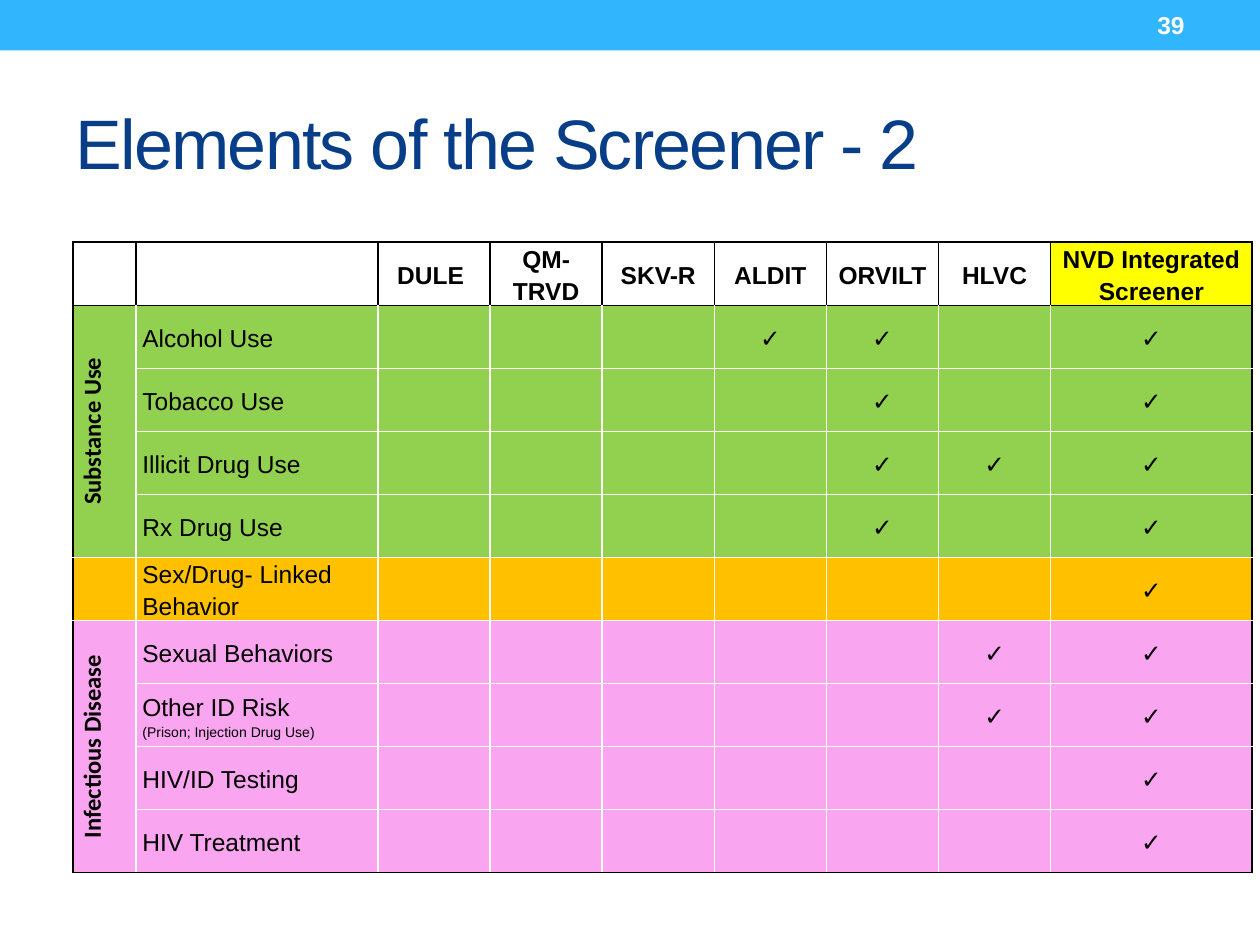
from lxml import etree
from pptx import Presentation
from pptx.dml.color import RGBColor
from pptx.enum.shapes import MSO_SHAPE
from pptx.enum.text import MSO_ANCHOR, PP_ALIGN
from pptx.oxml.ns import qn
from pptx.util import Inches, Pt

RECTANGLE = MSO_SHAPE.RECTANGLE
MIDDLE = MSO_ANCHOR.MIDDLE
LEFT, CENTER, RIGHT = PP_ALIGN.LEFT, PP_ALIGN.CENTER, PP_ALIGN.RIGHT

THEME = {
    "font": "Arial", "group_font": "Calibri",
    "title_size": 40, "text_size": 14, "note_size": 8,
    "bar": "31B6FD", "title": "073E87", "black": "000000", "white": "FFFFFF",
    "highlight": "FFFF00", "green": "92D050", "orange": "FFC000", "pink": "F9A5EF",
}

TITLE = "Elements of the Screener - 2"
PAGE_NUMBER = "39"
HEADERS = ["", "", "DULE ", "QM-TRVD", "SKV-R", "ALDIT", "ORVILT", "HLVC",
           "NVD Integrated Screener"]
SCREENER = HEADERS[-1]
GROUPS = [
    ("Substance Use", "green", [
        ("Alcohol Use", "", ["ALDIT", "ORVILT", SCREENER]),
        ("Tobacco Use", "", ["ORVILT", SCREENER]),
        ("Illicit Drug Use", "", ["ORVILT", "HLVC", SCREENER]),
        ("Rx Drug Use", "", ["ORVILT", SCREENER]),
    ]),
    ("", "orange", [("Sex/Drug- Linked Behavior", "", [SCREENER])]),
    ("Infectious Disease", "pink", [
        ("Sexual Behaviors", "", ["HLVC", SCREENER]),
        ("Other ID Risk", "(Prison; Injection Drug Use)", ["HLVC", SCREENER]),
        ("HIV/ID Testing", "", [SCREENER]),
        ("HIV Treatment", "", [SCREENER]),
    ]),
]
COLUMN_WIDTHS = [0.5, 1.92] + [0.89] * 6 + [1.6]
ROW_HEIGHT = 0.5
ROW_COUNT = 1 + sum(len(items) for _, _, items in GROUPS)
LAST_ROW, LAST_COLUMN = ROW_COUNT - 1, len(HEADERS) - 1


def color(name):
    return RGBColor.from_string(THEME[name])


def style(font, size, color_name, bold=False, family="font"):
    font.name = THEME[family]
    font.size = Pt(THEME[size])
    font.bold = bold
    font.color.rgb = color(color_name)


def write_cell(cell, text, bold=True, align=CENTER, family="font"):
    paragraph = cell.text_frame.paragraphs[0]
    paragraph.text = text
    paragraph.alignment = align
    paragraph.line_spacing = 1.15
    style(paragraph.font, "text_size", "black", bold, family)
    return paragraph


def set_borders(cell, row, end_row, column):
    black_edges = {
        "L": column == 0,
        "R": column == LAST_COLUMN,
        "T": row <= 1,
        "B": end_row == LAST_ROW,
    }
    properties = cell._tc.get_or_add_tcPr()
    for index, (side, is_black) in enumerate(black_edges.items()):
        line = etree.Element(qn(f"a:ln{side}"), w=str(Pt(1)))
        fill = etree.SubElement(line, qn("a:solidFill"))
        name = "black" if row == 0 or is_black else "white"
        etree.SubElement(fill, qn("a:srgbClr"), val=THEME[name])
        properties.insert(index, line)


def format_cell(cell, fill_name, row, column, end_row=None):
    cell.fill.solid()
    cell.fill.fore_color.rgb = color(fill_name)
    cell.vertical_anchor = MIDDLE
    cell.margin_left = cell.margin_right = Inches(0.05)
    cell.margin_top = cell.margin_bottom = 0
    set_borders(cell, row, row if end_row is None else end_row, column)


def add_bar(slide):
    bar = slide.shapes.add_shape(RECTANGLE, 0, 0, Inches(10), Inches(0.4))
    bar.shadow.inherit = False
    bar.fill.solid()
    bar.fill.fore_color.rgb = color("bar")
    bar.line.fill.background()


def add_title(slide):
    title = slide.shapes.title
    title.left, title.top = Inches(0.5), Inches(0.58)
    title.width, title.height = Inches(9), Inches(1.08)
    title.text_frame.vertical_anchor = MIDDLE
    paragraph = title.text_frame.paragraphs[0]
    paragraph.text = TITLE
    paragraph.alignment = LEFT
    style(paragraph.font, "title_size", "title")
    paragraph.runs[0]._r.get_or_add_rPr().set("spc", "-100")


def add_page_number(slide):
    box = slide.shapes.add_textbox(Inches(8.33), Inches(0.02), Inches(1.17), Inches(0.36))
    box.text_frame.word_wrap = True
    box.text_frame.vertical_anchor = MIDDLE
    paragraph = box.text_frame.paragraphs[0]
    paragraph.text = PAGE_NUMBER
    paragraph.alignment = RIGHT
    style(paragraph.font, "text_size", "white", bold=True)


def add_item(table, row, fill_name, label, note, checks):
    for column in range(1, len(HEADERS)):
        format_cell(table.cell(row, column), fill_name, row, column)
    paragraph = write_cell(table.cell(row, 1), label, bold=False, align=LEFT)
    if note:
        paragraph.add_line_break()
        run = paragraph.add_run()
        run.text = note
        run.font.size = Pt(THEME["note_size"])
    for header in checks:
        write_cell(table.cell(row, HEADERS.index(header)), "✓")


def add_screener_table(slide):
    table = slide.shapes.add_table(
        ROW_COUNT, len(HEADERS), Inches(0.58), Inches(1.92),
        Inches(sum(COLUMN_WIDTHS)), Inches(ROW_HEIGHT * ROW_COUNT)).table
    table.first_row = table.horz_banding = False
    for column, width in zip(table.columns, COLUMN_WIDTHS):
        column.width = Inches(width)
    for table_row in table.rows:
        table_row.height = Inches(ROW_HEIGHT)

    for column, header in enumerate(HEADERS):
        cell = table.cell(0, column)
        format_cell(cell, "highlight" if header == SCREENER else "white", 0, column)
        if header:
            write_cell(cell, header)

    row = 1
    for group, fill_name, items in GROUPS:
        end_row = row + len(items) - 1
        group_cell = table.cell(row, 0)
        if group:
            group_cell.merge(table.cell(end_row, 0))
            write_cell(group_cell, group, family="group_font")
            group_cell._tc.get_or_add_tcPr().set("vert", "vert270")
        for group_row in range(row, end_row + 1):
            format_cell(table.cell(group_row, 0), fill_name, group_row, 0, end_row)
        for item_row, item in enumerate(items, row):
            add_item(table, item_row, fill_name, *item)
        row = end_row + 1


def main():
    presentation = Presentation()
    presentation.slide_width, presentation.slide_height = Inches(10), Inches(7.5)
    slide = presentation.slides.add_slide(presentation.slide_layouts[5])
    add_bar(slide)
    add_title(slide)
    add_screener_table(slide)
    add_page_number(slide)
    presentation.save("out.pptx")


if __name__ == "__main__":
    main()
